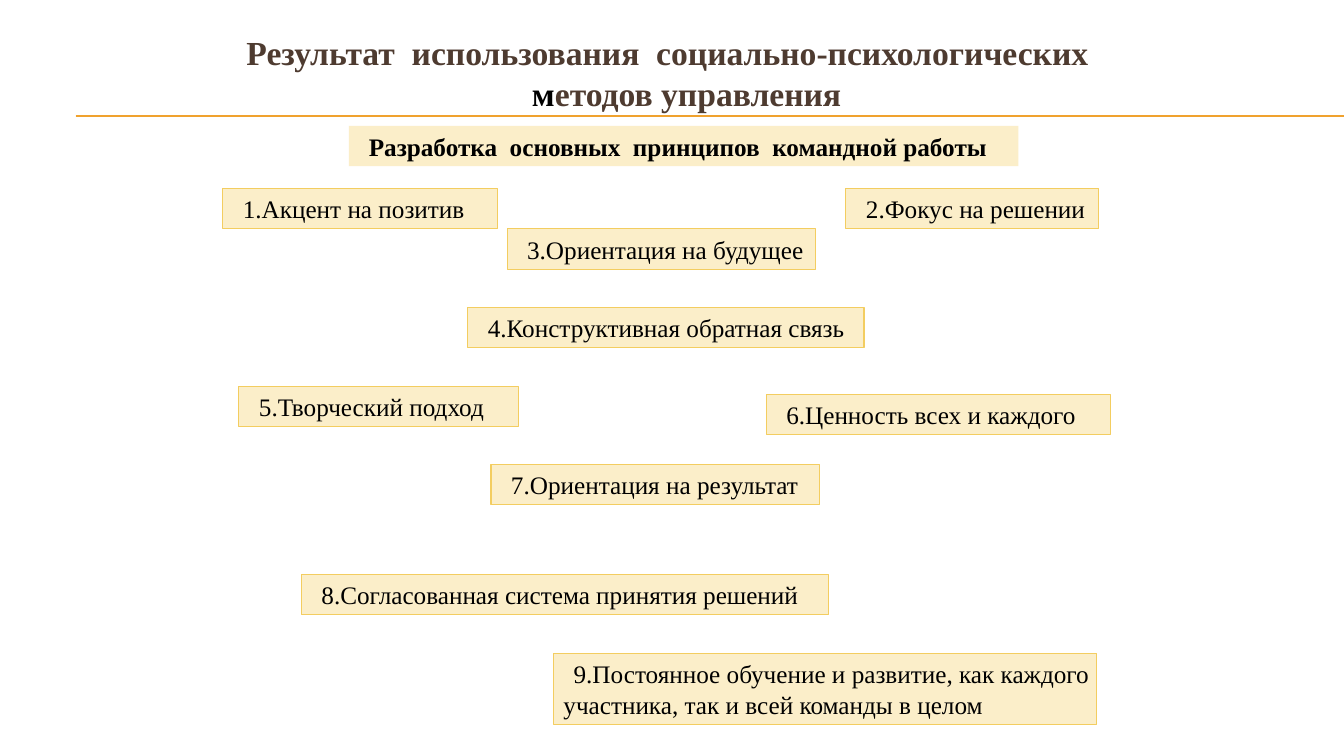
from dataclasses import dataclass

from pptx import Presentation
from pptx.dml.color import RGBColor
from pptx.enum.shapes import MSO_CONNECTOR, MSO_SHAPE
from pptx.enum.text import MSO_ANCHOR, MSO_AUTO_SIZE, PP_ALIGN
from pptx.oxml.ns import qn
from pptx.slide import Slide
from pptx.util import Inches, Pt

STRAIGHT = MSO_CONNECTOR.STRAIGHT
RECTANGLE = MSO_SHAPE.RECTANGLE
TOP, MIDDLE = MSO_ANCHOR.TOP, MSO_ANCHOR.MIDDLE
LEFT, CENTER = PP_ALIGN.LEFT, PP_ALIGN.CENTER
NO_AUTOFIT = MSO_AUTO_SIZE.NONE

BROWN = RGBColor(0x4E, 0x3B, 0x30)
BLACK = RGBColor(0x00, 0x00, 0x00)
ORANGE = RGBColor(0xF0, 0xA2, 0x2E)
CREAM = RGBColor(0xFB, 0xEE, 0xC9)
GOLD = RGBColor(0xF3, 0xCD, 0x60)
FONT = "Times New Roman"
TITLE_ONLY_LAYOUT = 5
SLIDE_WIDTH, SLIDE_HEIGHT = 13.33, 7.5


@dataclass
class Principle:
    text: str
    left: float
    top: float
    width: float
    height: float = 0.4
    is_heading: bool = False


PRINCIPLES = [
    Principle("Разработка  основных  принципов  командной работы",
              3.46, 1.25, 6.64, is_heading=True),
    Principle("1.Акцент на позитив", 2.21, 1.87, 2.73),
    Principle("2.Фокус на решении", 8.39, 1.87, 2.51),
    Principle("3.Ориентация на будущее", 5.03, 2.27, 3.06),
    Principle("4.Конструктивная обратная связь", 4.64, 3.05, 3.93),
    Principle("5.Творческий подход", 2.37, 3.83, 2.77),
    Principle("6.Ценность всех и каждого", 7.6, 3.91, 3.41),
    Principle("7.Ориентация на результат", 4.87, 4.61, 3.26),
    Principle("8.Согласованная система принятия решений", 2.99, 5.7, 5.23),
    Principle("9.Постоянное обучение и развитие, как каждого участника, "
              "так и всей команды в целом", 5.49, 6.48, 5.39, 0.71),
]
TITLE_SPANS = [
    ("Результат  использования  социально-психологических", BROWN),
    (" м", BLACK),
    ("етодов управления", BROWN),
]


def set_indent(para, margin: float, first_line: float) -> None:
    properties = para._p.get_or_add_pPr()
    properties.set("marL", str(Inches(margin)))
    properties.set("indent", str(Inches(first_line)))


def format_span(span, size: int, color: RGBColor, bold: bool) -> None:
    span.font.name = FONT
    span.font.size = Pt(size)
    span.font.bold = bold
    span.font.color.rgb = color


def add_rule(page: Slide, top: float) -> None:
    """Draw a horizontal line under the title, out to the right edge."""
    rule = page.shapes.add_connector(
        STRAIGHT, Inches(0.75), Inches(top), Inches(SLIDE_WIDTH), Inches(top))
    rule.line.color.rgb = ORANGE
    rule.line.width = Pt(0.75)
    properties = rule._element.spPr
    properties.append(properties.makeelement(qn("a:effectLst"), {}))


def fill_title(page: Slide) -> None:
    title = page.shapes.title
    title.left, title.top = Inches(1.98), Inches(0.23)
    title.width, title.height = Inches(9.28), Inches(1.09)
    frame = title.text_frame
    frame.word_wrap = True
    frame.auto_size = NO_AUTOFIT
    frame.vertical_anchor = TOP
    frame.margin_top = Inches(0.09)
    para = frame.paragraphs[0]
    para.alignment = CENTER
    set_indent(para, 0.38, -0.38)
    for text, color in TITLE_SPANS:
        span = para.add_run()
        span.text = text
        format_span(span, 24, color, bold=True)


def add_principle(page: Slide, principle: Principle) -> None:
    box = page.shapes.add_shape(
        RECTANGLE, Inches(principle.left), Inches(principle.top),
        Inches(principle.width), Inches(principle.height))
    box.shadow.inherit = False
    box.fill.solid()
    box.fill.fore_color.rgb = CREAM
    if principle.is_heading:
        box.line.fill.background()
    else:
        box.line.color.rgb = GOLD
        box.line.width = Pt(0.75)
    frame = box.text_frame
    frame.word_wrap = True
    frame.vertical_anchor = MIDDLE
    frame.margin_right = Inches(0.05)
    frame.text = principle.text
    para = frame.paragraphs[0]
    para.alignment = LEFT
    set_indent(para, 0, 0.1)
    format_span(para.runs[0], 18, BLACK, principle.is_heading)


def main() -> None:
    deck = Presentation()
    deck.slide_width, deck.slide_height = Inches(SLIDE_WIDTH), Inches(SLIDE_HEIGHT)
    page = deck.slides.add_slide(deck.slide_layouts[TITLE_ONLY_LAYOUT])
    fill_title(page)
    for top in (1.15, 1.16):
        add_rule(page, top)
    for principle in PRINCIPLES:
        add_principle(page, principle)
    deck.save("out.pptx")


if __name__ == "__main__":
    main()
